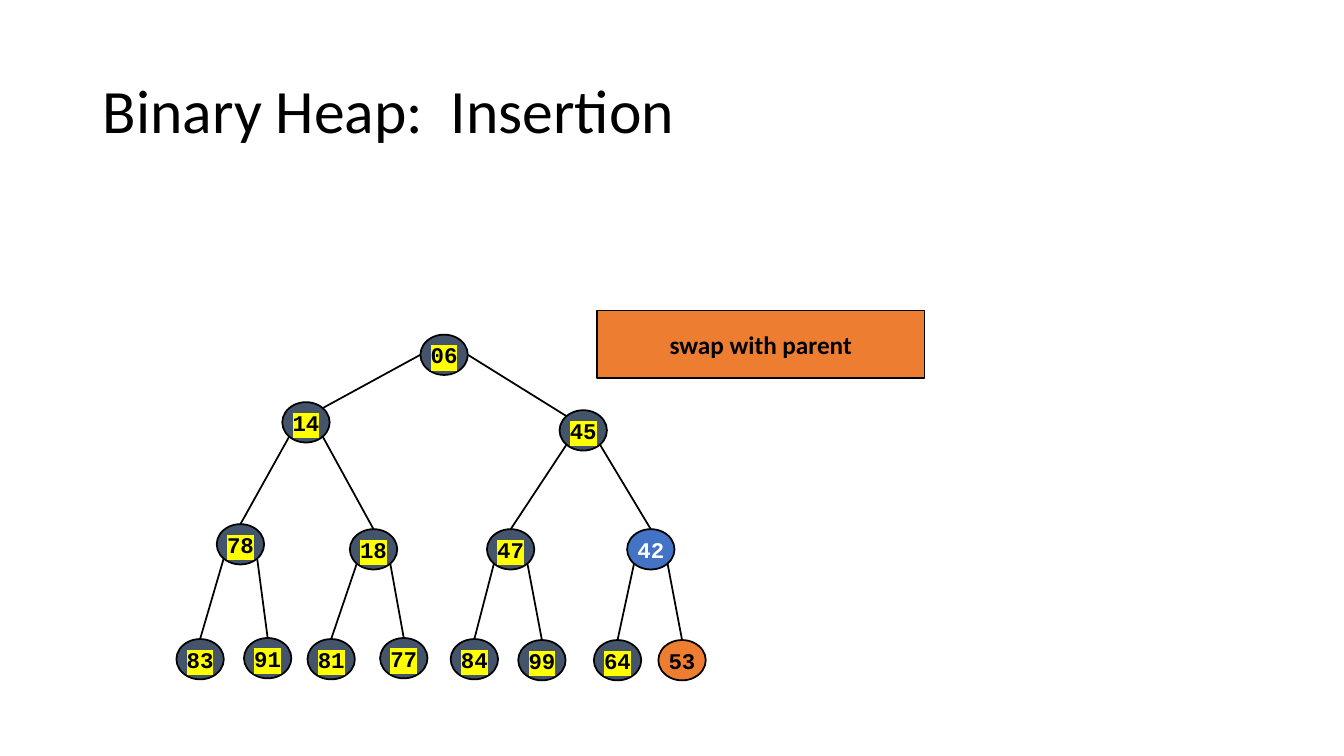
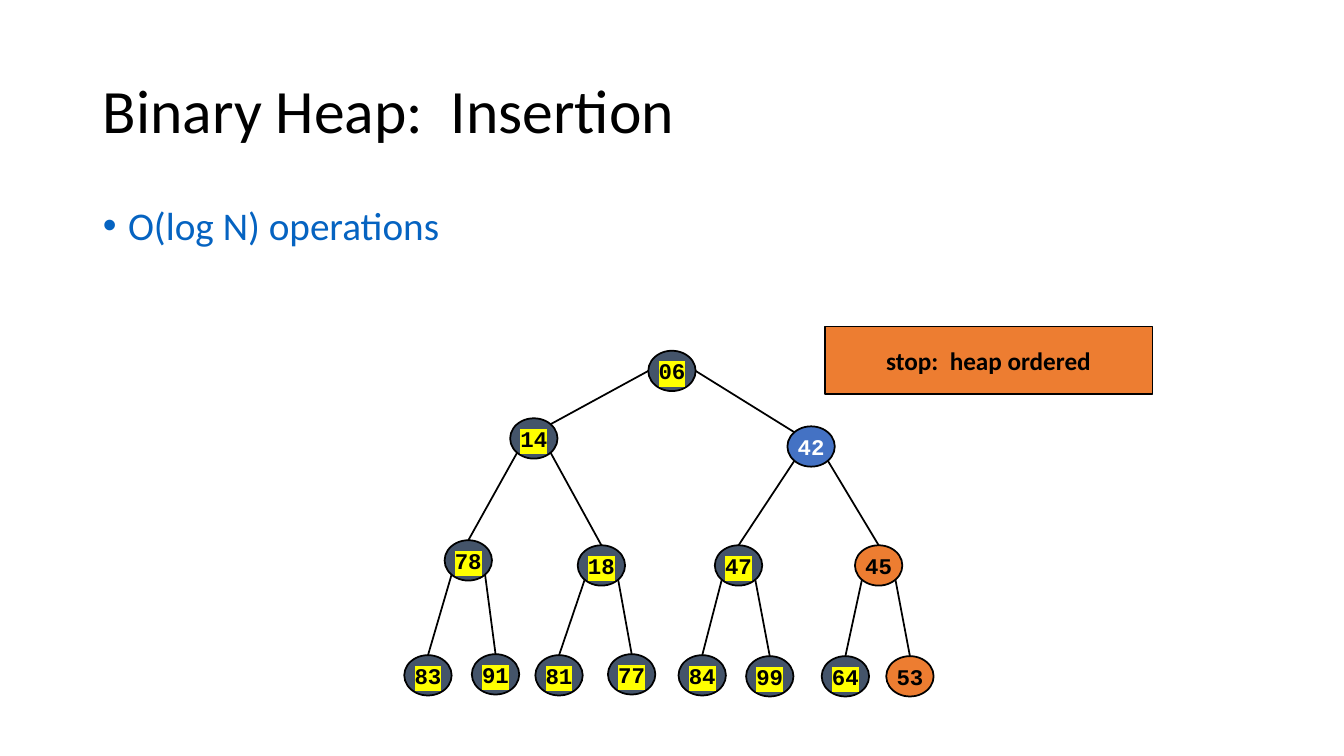
from dataclasses import dataclass
from math import sqrt

from lxml import etree
from pptx import Presentation
from pptx.dml.color import RGBColor
from pptx.enum.shapes import MSO_CONNECTOR, MSO_SHAPE
from pptx.enum.text import MSO_ANCHOR, PP_ALIGN
from pptx.oxml.ns import qn
from pptx.util import Inches, Pt

STRAIGHT = MSO_CONNECTOR.STRAIGHT
ELLIPSE, RECTANGLE = MSO_SHAPE.OVAL, MSO_SHAPE.RECTANGLE
MIDDLE, TOP = MSO_ANCHOR.MIDDLE, MSO_ANCHOR.TOP
CENTER, LEFT = PP_ALIGN.CENTER, PP_ALIGN.LEFT
TITLE_AND_CONTENT, TITLE_ONLY = 1, 5
TOP_SITE = 0


@dataclass(frozen=True)
class Theme:
    black: str = "000000"
    white: str = "FFFFFF"
    slate: str = "44546A"
    blue: str = "4472C4"
    orange: str = "ED7D31"
    link: str = "0563C1"
    yellow: str = "FFFF00"
    sans: str = "Calibri"
    mono: str = "Courier New"
    title_size: int = 44
    body_size: int = 28
    callout_size: int = 18
    node_size: int = 16
    line_width: float = 1.25


THEME = Theme()
NODE_STYLES = {
    "settled": (THEME.slate, THEME.black, THEME.yellow),
    "swapped": (THEME.orange, THEME.black, None),
    "inserted": (THEME.blue, THEME.white, None),
}

NODE_WIDTH, NODE_HEIGHT = 0.47, 0.4
DIAGONAL = 1 / sqrt(2)
NODE_PLACES = [
    (4.17, 3.32),
    (2.8, 3.99), (5.55, 4.07),
    (2.15, 5.2), (3.47, 5.25), (4.83, 5.25), (6.22, 5.25),
    (1.75, 6.34), (2.42, 6.33), (3.05, 6.34), (3.77, 6.33),
    (4.47, 6.34), (5.14, 6.35), (5.89, 6.35), (6.53, 6.35),
]
CALLOUT_PLACE = (5.92, 3.08)
CALLOUT_SIZE = (3.25, 0.67)

TITLE = "Binary Heap:  Insertion"
SLIDES = [
    {
        "shift": (0, 0),
        "bullet": None,
        "callout": "swap with parent",
        "heap": "06 14 45 78 18 47 42 83 91 81 77 84 99 64 53",
        "states": {"42": "inserted", "53": "swapped"},
    },
    {
        "shift": (2.26, 0.16),
        "bullet": "O(log N) operations",
        "callout": "stop:  heap ordered",
        "heap": "06 14 42 78 18 47 45 83 91 81 77 84 99 64 53",
        "states": {"42": "inserted", "45": "swapped", "53": "swapped"},
    },
]


def apply(target, values):
    for name, value in values.items():
        setattr(target, name, value)


def rgb(color):
    return RGBColor.from_string(color)


def rim_point(place, across, down):
    left, top = place
    return (left + NODE_WIDTH * (1 + across) / 2,
            top + NODE_HEIGHT * (1 + down) / 2)


class HeapDeck:
    def __init__(self, theme):
        self.theme = theme
        self.deck = Presentation()
        self.deck.slide_width = Inches(13.33)
        self.deck.slide_height = Inches(7.5)
        self.slide = None

    def start_slide(self, layout):
        self.slide = self.deck.slides.add_slide(self.deck.slide_layouts[layout])

    def place(self, shape, left, top, width, height):
        apply(shape, {"left": Inches(left), "top": Inches(top),
                      "width": Inches(width), "height": Inches(height)})

    def add_text(self, frame, text, size, font, color, bold=False, align=LEFT):
        para = frame.paragraphs[0]
        para.alignment = align
        span = para.add_run()
        span.text = text
        apply(span.font, {"name": font, "size": Pt(size), "bold": bold})
        span.font.color.rgb = rgb(color)
        return para, span

    def highlight(self, span, color):
        mark = etree.Element(qn("a:highlight"))
        etree.SubElement(mark, qn("a:srgbClr"), val=color)
        span.font._element.find(qn("a:latin")).addprevious(mark)

    def title(self, text):
        shape = self.slide.shapes.title
        self.place(shape, 0.92, 0.4, 11.5, 1.45)
        shape.text_frame.vertical_anchor = MIDDLE
        para, _ = self.add_text(shape.text_frame, text, self.theme.title_size,
                                self.theme.sans, self.theme.black)
        para.line_spacing = 0.9

    def bullet(self, text):
        body = self.slide.placeholders[1]
        self.place(body, 0.92, 2, 11.5, 4.76)
        body.text_frame.vertical_anchor = TOP
        para, _ = self.add_text(body.text_frame, text, self.theme.body_size,
                                self.theme.sans, self.theme.link)
        apply(para, {"line_spacing": 0.9, "space_before": Pt(10)})
        settings = para._p.get_or_add_pPr()
        settings.set("marL", str(Inches(0.25)))
        settings.set("indent", str(Inches(-0.25)))

    def outlined(self, kind, place, size, fill):
        shape = self.slide.shapes.add_shape(
            kind, *(Inches(length) for length in (*place, *size)))
        shape.shadow.inherit = False
        shape.fill.solid()
        shape.fill.fore_color.rgb = rgb(fill)
        shape.line.color.rgb = rgb(self.theme.black)
        shape.line.width = Pt(self.theme.line_width)
        apply(shape.text_frame, {"vertical_anchor": MIDDLE, "word_wrap": False})
        return shape

    def node(self, text, place, state):
        fill, color, mark = NODE_STYLES[state]
        shape = self.outlined(ELLIPSE, place, (NODE_WIDTH, NODE_HEIGHT), fill)
        apply(shape.text_frame, {"margin_left": 0, "margin_right": 0,
                                 "margin_top": 0, "margin_bottom": 0})
        _, span = self.add_text(shape.text_frame, text, self.theme.node_size,
                                self.theme.mono, color, True, CENTER)
        if mark:
            self.highlight(span, mark)
        return shape

    def callout(self, text, place):
        box = self.outlined(RECTANGLE, place, CALLOUT_SIZE, self.theme.orange)
        self.add_text(box.text_frame, text, self.theme.callout_size,
                      self.theme.sans, self.theme.black, True, CENTER)

    def edge(self, begin, end):
        line = self.slide.shapes.add_connector(
            STRAIGHT, *(Inches(length) for length in (*begin, *end)))
        line.line.color.rgb = rgb(self.theme.black)
        line.line.width = Pt(self.theme.line_width)
        etree.SubElement(line._element.spPr, qn("a:effectLst"))
        return line

    def tree(self, labels, places, states):
        nodes = [self.node(label, place, states.get(label, "settled"))
                 for label, place in zip(labels, places)]
        for child in range(1, len(nodes)):
            parent = (child - 1) // 2
            side = -1 if child % 2 else 1
            if parent == 0:
                self.edge(rim_point(places[parent], side, 0),
                          rim_point(places[child], -side * DIAGONAL, -DIAGONAL))
            else:
                line = self.edge(
                    rim_point(places[parent], side * DIAGONAL, DIAGONAL),
                    rim_point(places[child], 0, -1))
                line.end_connect(nodes[child], TOP_SITE)


def main():
    heap_deck = HeapDeck(THEME)
    for content in SLIDES:
        right, down = content["shift"]
        places = [(left + right, top + down) for left, top in NODE_PLACES]
        heap_deck.start_slide(TITLE_AND_CONTENT if content["bullet"] else TITLE_ONLY)
        heap_deck.title(TITLE)
        if content["bullet"]:
            heap_deck.bullet(content["bullet"])
        heap_deck.tree(content["heap"].split(), places, content["states"])
        heap_deck.callout(content["callout"],
                          (CALLOUT_PLACE[0] + right, CALLOUT_PLACE[1] + down))
    heap_deck.deck.save("out.pptx")


if __name__ == "__main__":
    main()
